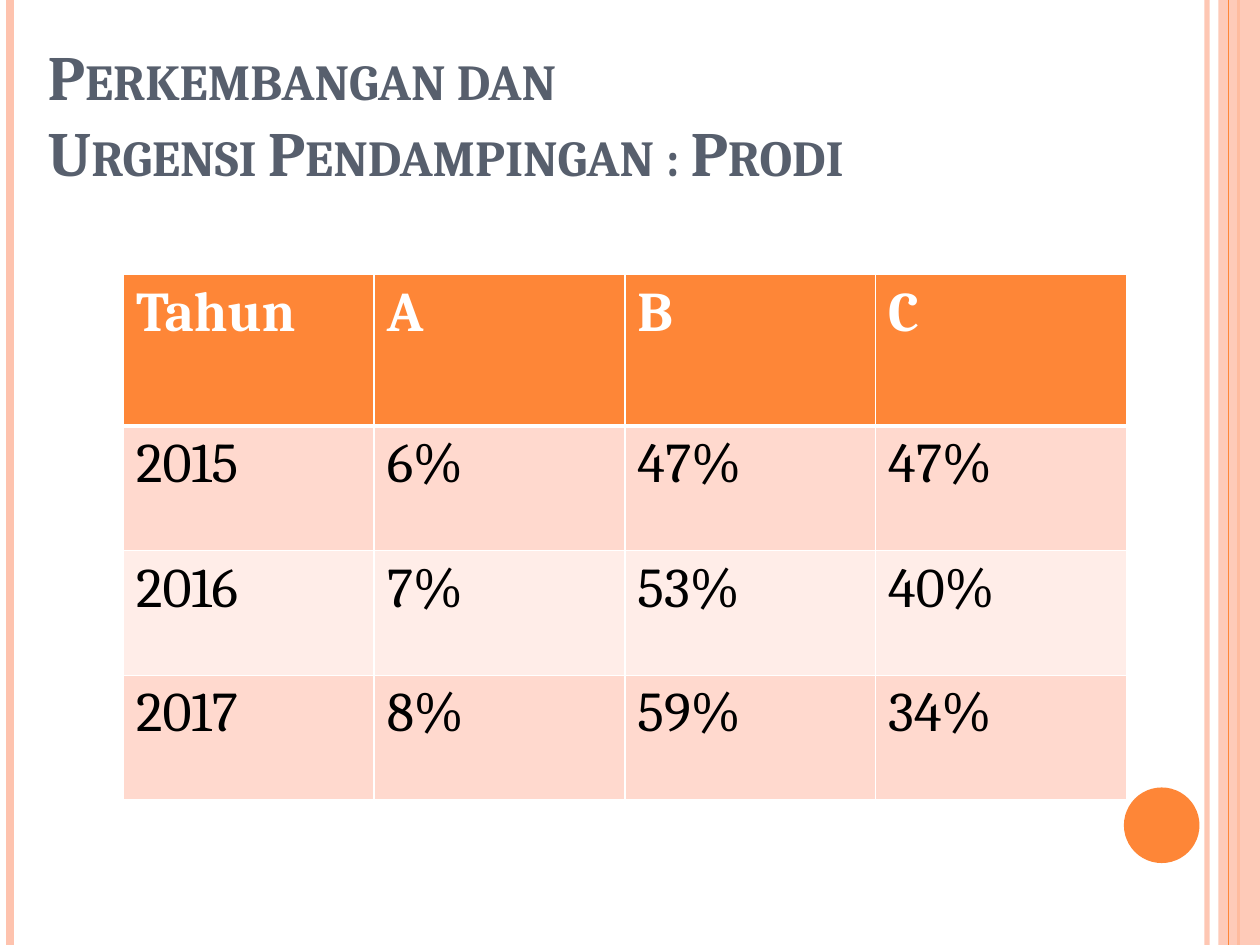
from dataclasses import dataclass

from pptx import Presentation
from pptx.dml.color import RGBColor
from pptx.enum.shapes import MSO_CONNECTOR, MSO_SHAPE
from pptx.enum.text import MSO_ANCHOR
from pptx.oxml.ns import qn
from pptx.util import Inches, Pt
from lxml import etree

STRAIGHT = MSO_CONNECTOR.STRAIGHT
RECTANGLE, OVAL = MSO_SHAPE.RECTANGLE, MSO_SHAPE.OVAL
BOTTOM = MSO_ANCHOR.BOTTOM

ORANGE = RGBColor(0xFE, 0x86, 0x37)
PEACH = RGBColor(0xFE, 0xC3, 0xAE)
BAND_DARK = RGBColor(0xFF, 0xD9, 0xCE)
BAND_LIGHT = RGBColor(0xFF, 0xED, 0xE8)
SLATE = RGBColor(0x57, 0x5F, 0x6D)
WHITE = RGBColor(0xFF, 0xFF, 0xFF)
BLACK = RGBColor(0, 0, 0)

FONT = "Cambria"
WIDTH, HEIGHT = 10, 7.5


@dataclass
class Stripe:
    x: float
    weight: float
    color: RGBColor
    opacity: int = 100


@dataclass
class Block:
    kind: int
    left: float
    top: float
    width: float
    height: float
    color: RGBColor
    opacity: int = 100


EDGE_STRIPES = [Stripe(9.58, 3, PEACH, 93), Stripe(0.08, 4.5, PEACH),
                Stripe(9.83, 1.5, ORANGE)]
SIDE_BAND = Block(RECTANGLE, 9.67, 0, 0.33, HEIGHT, PEACH, 87)
BAND_STRIPE = Stripe(9.75, 0.75, ORANGE)
DISC = Block(OVAL, 8.92, 6.25, 0.6, 0.6, ORANGE)

ACCREDITATION = [
    ("Tahun", "A", "B", "C"),
    ("2015", "6%", "47%", "47%"),
    ("2016", "7%", "53%", "40%"),
    ("2017", "8%", "59%", "34%"),
]
COLUMN_WIDTH, HEADER_HEIGHT, ROW_HEIGHT = 1.99, 1.2, 0.99


def set_opacity(element, percent: int) -> None:
    if percent < 100:
        color = next(element.iter(qn("a:srgbClr")))
        etree.SubElement(color, qn("a:alpha"), val=str(percent * 1000))


def draw_stripe(page, stripe: Stripe) -> None:
    x = Inches(stripe.x)
    line = page.shapes.add_connector(STRAIGHT, x, 0, x, Inches(HEIGHT))
    line.line.color.rgb = stripe.color
    line.line.width = Pt(stripe.weight)
    properties = line._element.spPr
    set_opacity(properties, stripe.opacity)
    etree.SubElement(properties, qn("a:effectLst"))


def draw_block(page, block: Block) -> None:
    shape = page.shapes.add_shape(block.kind, Inches(block.left), Inches(block.top),
                                  Inches(block.width), Inches(block.height))
    shape.shadow.inherit = False
    shape.fill.solid()
    shape.fill.fore_color.rgb = block.color
    shape.line.fill.background()
    set_opacity(shape._element.spPr, block.opacity)


def style_text(para, size: int, color: RGBColor, bold: bool) -> None:
    for span in para.runs:
        span.font.name = FONT
        span.font.size = Pt(size)
        span.font.bold = bold
        span.font.color.rgb = color


def draw_title(page) -> None:
    box = page.shapes.add_textbox(Inches(0.28), Inches(0.3), Inches(9.21), Inches(1.25))
    frame = box.text_frame
    frame.word_wrap = True
    frame.vertical_anchor = BOTTOM
    para = frame.paragraphs[0]
    para.text = "Perkembangan dan \vUrgensi Pendampingan : Prodi"
    style_text(para, 36, SLATE, True)
    for span in para.runs:
        span.font._element.set("cap", "small")


def add_border(cell, side: str, weight: float) -> None:
    line = etree.SubElement(cell._tc.get_or_add_tcPr(), qn(f"a:ln{side}"),
                            w=str(Pt(weight)))
    fill = etree.SubElement(line, qn("a:solidFill"))
    etree.SubElement(fill, qn("a:srgbClr"), val=str(WHITE))


def draw_table(page) -> None:
    rows, columns = len(ACCREDITATION), len(ACCREDITATION[0])
    heights = [HEADER_HEIGHT] + [ROW_HEIGHT] * (rows - 1)
    table = page.shapes.add_table(rows, columns, Inches(0.98), Inches(2.18),
                                  Inches(COLUMN_WIDTH * columns),
                                  Inches(sum(heights))).table
    for column in table.columns:
        column.width = Inches(COLUMN_WIDTH)
    for r, values in enumerate(ACCREDITATION):
        table.rows[r].height = Inches(heights[r])
        header = r == 0
        fill = ORANGE if header else BAND_DARK if r % 2 else BAND_LIGHT
        for c, value in enumerate(values):
            cell = table.cell(r, c)
            # Borders come before the fill; the rule under the header is heavier
            for side in "LRTB":
                heavy = (r, side) in ((0, "B"), (1, "T"))
                add_border(cell, side, 3 if heavy else 1)
            cell.fill.solid()
            cell.fill.fore_color.rgb = fill
            cell.text_frame.text = value
            style_text(cell.text_frame.paragraphs[0], 32,
                       WHITE if header else BLACK, header)


def main() -> None:
    deck = Presentation()
    deck.slide_width, deck.slide_height = Inches(WIDTH), Inches(HEIGHT)
    page = deck.slides.add_slide(deck.slide_layouts[6])

    # Side decoration
    for stripe in EDGE_STRIPES:
        draw_stripe(page, stripe)
    draw_block(page, SIDE_BAND)
    draw_stripe(page, BAND_STRIPE)
    draw_block(page, DISC)

    # Content
    draw_title(page)
    draw_table(page)
    deck.save("out.pptx")


if __name__ == "__main__":
    main()
